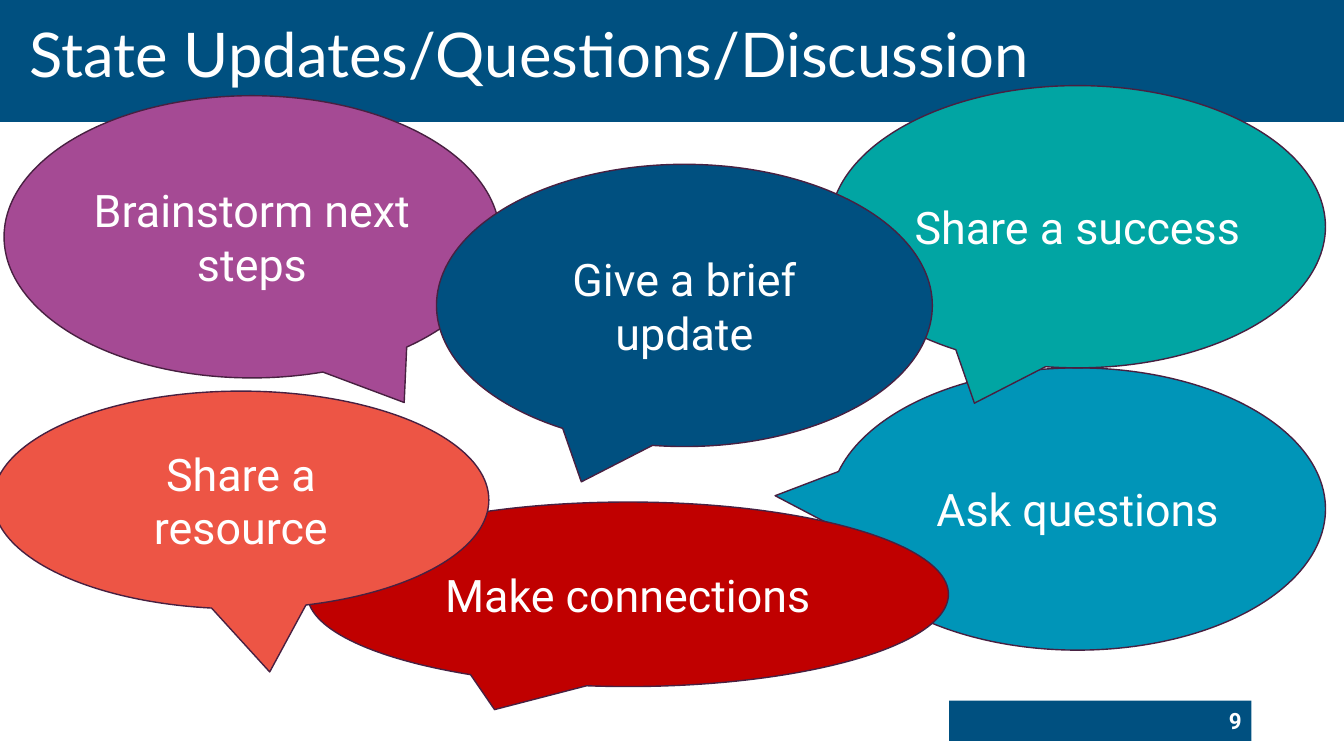
import pptx
import pptx.util
import pptx.dml.color
import pptx.enum.shapes
import pptx.enum.text
from dataclasses import dataclass


@dataclass(frozen=True)
class Theme:
    navy: str = "005080"
    blue: str = "0095B8"
    teal: str = "01A5A3"
    purple: str = "A54A94"
    red: str = "C00000"
    coral: str = "ED5545"
    outline: str = "482041"
    white: str = "FFFFFF"
    heading: str = "Lato"
    body: str = "Roboto"
    title_size: int = 44
    bubble_size: int = 32
    number_size: int = 16


theme = Theme()
Pt = pptx.util.Pt
RGB = pptx.dml.color.RGBColor.from_string
SHAPE = pptx.enum.shapes.MSO_SHAPE
ALIGN = pptx.enum.text.PP_ALIGN
ANCHOR = pptx.enum.text.MSO_ANCHOR


def add_filled(kind, box, color):
    sp = s.shapes.add_shape(kind, *[Pt(v) for v in box])
    sp.shadow.inherit = False
    sp.fill.solid()
    sp.fill.fore_color.rgb = RGB(color)
    sp.line.fill.background()
    return sp


def write(sp, text, font, size, align, bold=False):
    tf = sp.text_frame
    tf.word_wrap = True
    tf.auto_size = pptx.enum.text.MSO_AUTO_SIZE.NONE
    tf.vertical_anchor = ANCHOR.MIDDLE
    p = tf.paragraphs[0]
    p.alignment = align
    r = p.add_run()
    r.text = text
    r.font.name = font
    r.font.size = Pt(size)
    r.font.bold = bold
    r.font.color.rgb = RGB(theme.white)
    return p


prs = pptx.Presentation()
prs.slide_width, prs.slide_height = Pt(960), Pt(540)
s = prs.slides.add_slide(prs.slide_layouts[5])

add_filled(SHAPE.RECTANGLE, (0, 0, 960, 87), theme.navy)
number = add_filled(SHAPE.RECTANGLE, (678, 500.5, 216, 29), theme.navy)
number.top, number.height = Pt(500.4), Pt(28.8)
write(number, "9", theme.body, theme.number_size, ALIGN.RIGHT, True)

title = s.shapes.title
title.left, title.top, title.width, title.height = Pt(13.7), Pt(15.8), Pt(810.7), Pt(50.4)
p = write(title, "State Updates/Questions/Discussion", theme.heading, theme.title_size, ALIGN.LEFT)
p.line_spacing = 0.9
title.element.getparent().append(title.element)

W, H = 354.2, 201.6
lower_left = (-0.208, 0.625)
bubbles = [
    ("Ask questions", (592.6, 262.8, W, H), theme.blue, (-0.61, -0.047)),
    ("Share a success", (592.6, 61.2, W, H), theme.teal, lower_left),
    ("Brainstorm next steps", (2.9, 68.4, W, H), theme.purple, (0.307, 0.587)),
    ("Make connections", (219.6, 358.6, 457.9, 131.8), theme.red, lower_left),
    ("Share a resource", (-5, 279.4, W, 155.5), theme.coral, (0.058, 0.79)),
    ("Give a brief update", (311.8, 117.4, W, H), theme.navy, lower_left),
]
for text, box, color, tip in bubbles:
    sp = add_filled(SHAPE.OVAL_CALLOUT, box, color)
    sp.adjustments[0], sp.adjustments[1] = tip
    sp.line.color.rgb = RGB(theme.outline)
    sp.line.width = Pt(1)
    write(sp, text, theme.body, theme.bubble_size, ALIGN.CENTER)

prs.save("out.pptx")
